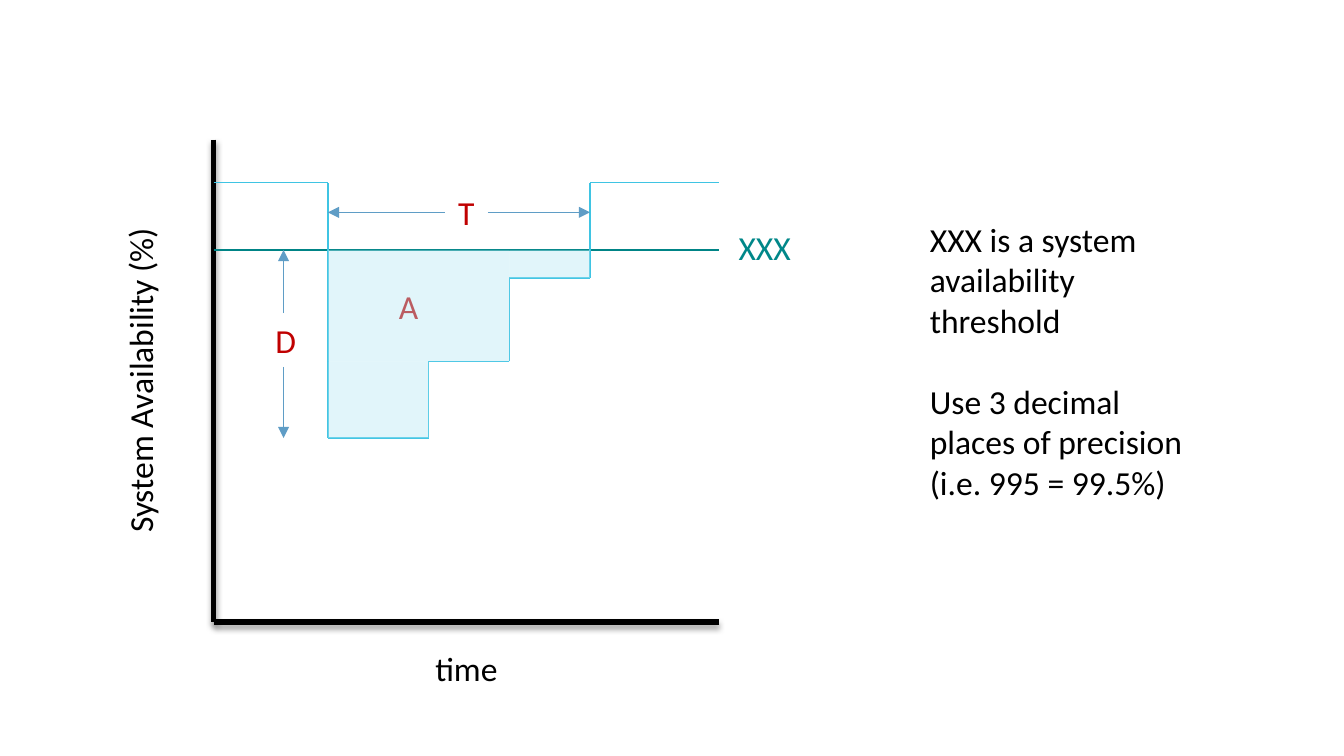
from lxml.etree import SubElement
from pptx import Presentation
from pptx.dml.color import RGBColor
from pptx.enum.shapes import MSO_CONNECTOR as Connector, MSO_SHAPE as Shape
from pptx.enum.text import MSO_AUTO_SIZE as AutoSize, PP_ALIGN as Align
from pptx.oxml.ns import qn
from pptx.util import Inches, Pt

THEME = {
    "font": "Calibri", "size": 18, "paragraph_gap": 22,
    "text": "000000", "axis": "000000", "measure": "C00000",
    "threshold": "008486", "threshold_label": "008789",
    "step": "3FC4E3", "arrow": "5F9DC6", "area": "B4E8F4",
    "area_opacity": 40, "thin": 0.75, "thick": 3,
}
COLUMNS = {"axis": 1.59, "depth": 2.11, "drop": 2.44, "partial": 3.19,
           "duration": 3.47, "better": 3.79, "restored": 4.39, "end": 5.35}
ROWS = {"top": 1.04, "normal": 1.36, "duration": 1.58, "threshold": 1.86,
        "better": 2.07, "depth": 2.53, "partial": 2.69, "lowest": 3.26,
        "base": 4.63}
LABEL_HEIGHT = 0.4
LETTER_WIDTH = 0.32

AXES = [("axis", "top", "axis", "base"), ("end", "base", "axis", "base")]
STEPS = [("axis", "normal"), ("drop", "normal"), ("drop", "lowest"),
         ("partial", "lowest"), ("partial", "partial"), ("better", "partial"),
         ("better", "better"), ("restored", "better"),
         ("restored", "normal"), ("end", "normal")]
AREAS = [("drop", "threshold", "better", "partial"),
         ("drop", "partial", "partial", "lowest"),
         ("better", "threshold", "restored", "better")]
LABELS = [
    ("time", 3.47, 4.97, 1.59, "text", 0),
    ("System Availability (%)", 1.04, 2.83, 3.41, "text", 270),
    ("XXX", 5.69, 1.84, 1.59, "threshold_label", 0),
    ("D", COLUMNS["depth"], ROWS["depth"], LETTER_WIDTH, "measure", 0),
    ("T", COLUMNS["duration"], ROWS["duration"], LETTER_WIDTH, "measure", 0),
    ("A", 3.03, 2.28, LETTER_WIDTH, "measure", 0),
]
ARROWS = [("D", 0, "depth", "threshold"), ("D", 2, "depth", "lowest"),
          ("T", 3, "restored", "duration"), ("T", 1, "drop", "duration")]
NOTES = ["XXX is a system availability threshold",
         "Use 3 decimal places of precision", "(i.e. 995 = 99.5%)"]
NOTES_BOX = (6.82, 1.58, 2.19, 2.22)


def color(name):
    return RGBColor.from_string(THEME[name])


def point(column, row):
    return Inches(COLUMNS[column]), Inches(ROWS[row])


def add_line(slide, start, end, color_name, width="thin"):
    line = slide.shapes.add_connector(Connector.STRAIGHT, *point(*start), *point(*end))
    line.line.color.rgb = color(color_name)
    line.line.width = Pt(THEME[width])
    SubElement(line._element.spPr, qn("a:effectLst"))
    return line


def add_shadow(line):
    effects = line._element.spPr.find(qn("a:effectLst"))
    shadow = SubElement(effects, qn("a:outerShdw"), blurRad=str(Pt(3.1)),
                        dist=str(Pt(1.8)), dir="5400000", rotWithShape="0")
    black = SubElement(shadow, qn("a:srgbClr"), val=THEME["axis"])
    SubElement(black, qn("a:alpha"), val="35000")


def add_text(slide, box, lines, color_name, alignment):
    shape = slide.shapes.add_textbox(*map(Inches, box))
    frame = shape.text_frame
    frame.text = "\n".join(lines)
    frame.word_wrap = True
    frame.auto_size = AutoSize.SHAPE_TO_FIT_TEXT
    for paragraph in frame.paragraphs:
        paragraph.alignment = alignment
        font = paragraph.runs[0].font
        font.name = THEME["font"]
        font.size = Pt(THEME["size"])
        font.color.rgb = color(color_name)
    return shape


def add_area(slide, left, top, right, bottom):
    x, y = point(left, top)
    far_x, far_y = point(right, bottom)
    area = slide.shapes.add_shape(Shape.RECTANGLE, x, y, far_x - x, far_y - y)
    area.shadow.inherit = False
    area.fill.solid()
    area.fill.fore_color.rgb = color("area")
    area.line.fill.background()
    fill_color = area._element.spPr.find(qn("a:solidFill"))[0]
    SubElement(fill_color, qn("a:alpha"), val=str(THEME["area_opacity"] * 1000))


def main():
    presentation = Presentation()
    presentation.slide_width = Inches(10)
    presentation.slide_height = Inches(10 * 9 / 16)
    slide = presentation.slides.add_slide(presentation.slide_layouts[6])

    for left, top, right, bottom in AXES:
        add_shadow(add_line(slide, (left, top), (right, bottom), "axis", "thick"))
    add_line(slide, ("axis", "threshold"), ("end", "threshold"), "threshold")
    for start, end in zip(STEPS, STEPS[1:]):
        add_line(slide, start, end, "step")

    labels = {}
    for text, center_x, center_y, width, color_name, rotation in LABELS:
        box = (center_x - width / 2, center_y - LABEL_HEIGHT / 2, width, LABEL_HEIGHT)
        labels[text] = add_text(slide, box, [text], color_name, Align.CENTER)
        labels[text].rotation = rotation

    for letter, side, column, row in ARROWS:
        arrow = add_line(slide, (column, row), (column, row), "arrow")
        arrow.begin_connect(labels[letter], side)
        SubElement(arrow.line._get_or_add_ln(), qn("a:tailEnd"), type="triangle")

    for area in AREAS:
        add_area(slide, *area)

    notes = add_text(slide, NOTES_BOX, NOTES, "text", Align.LEFT)
    notes.text_frame.paragraphs[1].space_before = Pt(THEME["paragraph_gap"])
    presentation.save("out.pptx")


if __name__ == "__main__":
    main()
